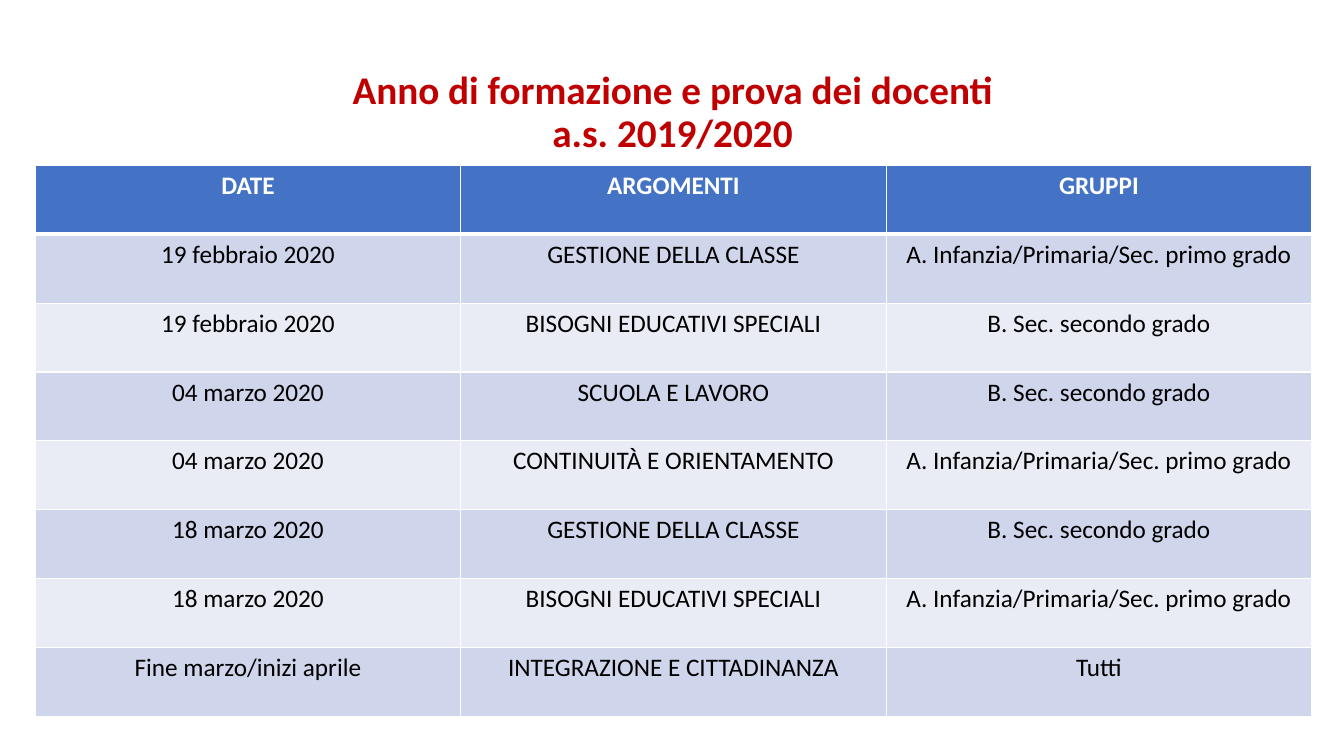
from lxml.etree import SubElement as Sub
from pptx import Presentation
from pptx.dml.color import RGBColor as RGB
from pptx.enum.text import MSO_ANCHOR as Anchor, MSO_AUTO_SIZE as Fit, PP_ALIGN as Align
from pptx.oxml.ns import qn
from pptx.util import Inches, Pt

HEAD = {"size": Pt(18), "name": "Calibri", "bold": True}
BODY = {**HEAD, "bold": False}
TITLE = {**HEAD, "size": Pt(28)}
BANDS = ("E9EBF5", "CFD5EA")

GROUP_A = "A. Infanzia/Primaria/Sec. primo grado"
GROUP_B = "B. Sec. secondo grado"
ROWS = [
    ("DATE", "ARGOMENTI", "GRUPPI"),
    ("19 febbraio 2020", "GESTIONE DELLA CLASSE", GROUP_A),
    ("19 febbraio 2020", "BISOGNI EDUCATIVI SPECIALI", GROUP_B),
    ("04 marzo 2020", "SCUOLA E LAVORO", GROUP_B),
    ("04 marzo 2020", "CONTINUITÀ E ORIENTAMENTO", GROUP_A),
    ("18 marzo 2020", "GESTIONE DELLA CLASSE", GROUP_B),
    ("18 marzo 2020", "BISOGNI EDUCATIVI SPECIALI", GROUP_A),
    ("Fine marzo/inizi aprile", "INTEGRAZIONE E CITTADINANZA", "Tutti"),
]


def paint(target, tone):
    """Set a font or foreground colour from a hex string."""
    target.rgb = RGB.from_string(tone)


def style(frame, look, tone):
    """Centre the text and apply the font values."""
    for para in frame.paragraphs:
        para.alignment = Align.CENTER
        for run in para.runs:
            for key, value in look.items():
                setattr(run.font, key, value)
            paint(run.font.color, tone)


def edge(cell, widths, tone):
    """Draw the cell borders; widths are points by side."""
    props = cell._tc.get_or_add_tcPr()
    for side, width in widths.items():
        line = Sub(props, qn(f"a:ln{side}"), w=str(Pt(width)))
        fill = Sub(line, qn("a:solidFill"))
        Sub(fill, qn("a:srgbClr"), val=tone)


def add_title(slide, box, text):
    """Fill the title placeholder."""
    title = slide.shapes.title
    title.left, title.top, title.width, title.height = map(Inches, box)
    frame = title.text_frame
    frame.text = text
    frame.word_wrap = True
    frame.auto_size = Fit.NONE
    frame.vertical_anchor = Anchor.MIDDLE
    frame.paragraphs[0].line_spacing = 0.9
    style(frame, TITLE, "C00000")


def add_plan(slide, box, rows):
    """Place the calendar table with a header and banded rows."""
    table = slide.shapes.add_table(len(rows), len(rows[0]), *map(Inches, box)).table
    for r, row in enumerate(rows):
        head = r == 0
        look, ink = (HEAD, "FFFFFF") if head else (BODY, "000000")
        # The rule under the header is thicker
        widths = {"L": 1, "R": 1, "T": 3 if r == 1 else 1, "B": 3 if head else 1}
        for c, text in enumerate(row):
            cell = table.cell(r, c)
            cell.text = text
            style(cell.text_frame, look, ink)
            edge(cell, widths, "FFFFFF")
            cell.fill.solid()
            paint(cell.fill.fore_color, "4472C4" if head else BANDS[r % 2])


def main():
    deck = Presentation()
    deck.slide_width, deck.slide_height = Inches(13.33), Inches(7.5)
    slide = deck.slides.add_slide(deck.slide_layouts[5])
    add_title(slide, (0.92, 0.4, 11.5, 1.45),
              "Anno di formazione e prova dei docenti\va.s. 2019/2020")
    add_plan(slide, (0.35, 1.64, 12.66, 5.47), ROWS)
    deck.save("out.pptx")


if __name__ == "__main__":
    main()
